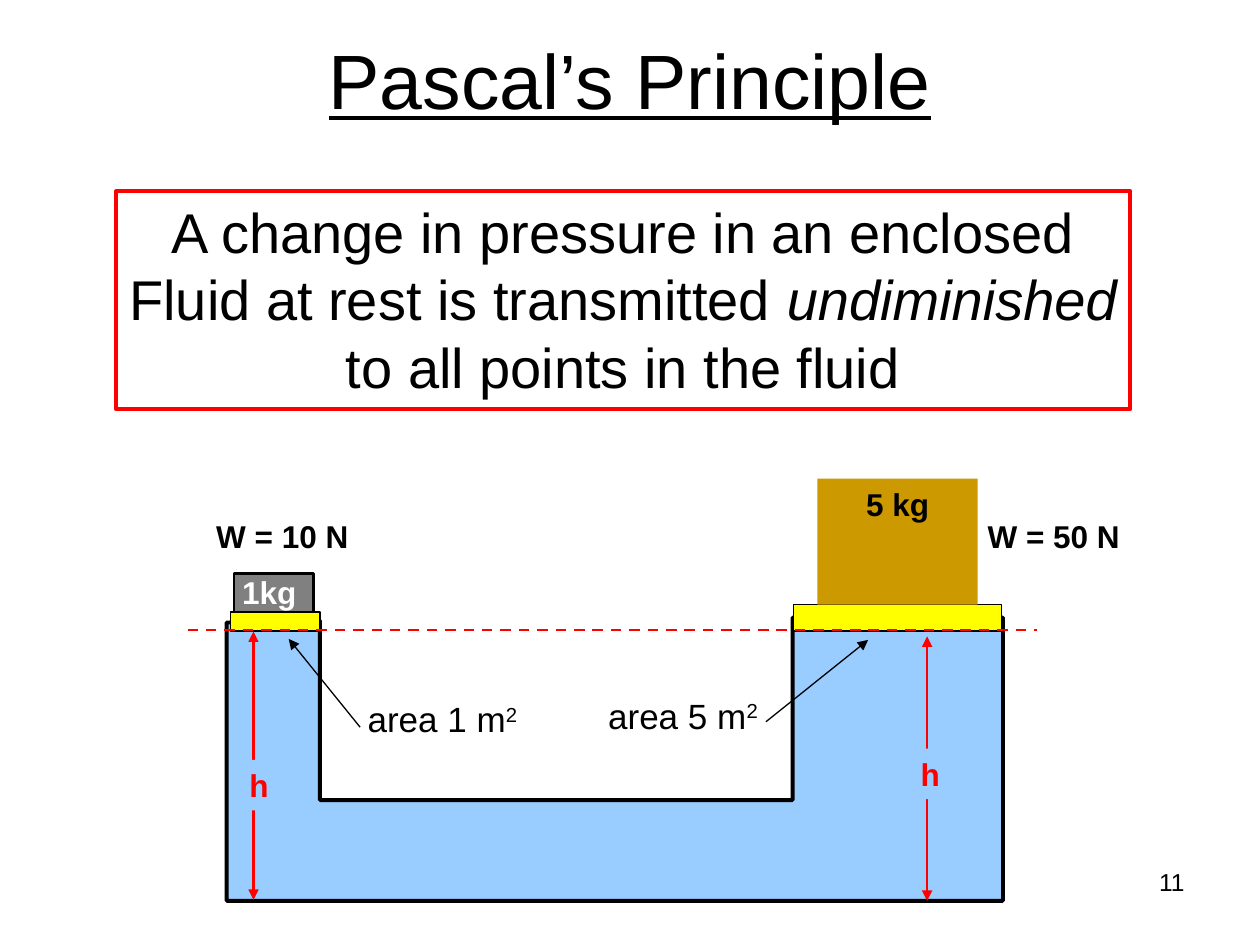
"""Build the Pascal's principle slide with its hydraulic press diagram."""
from lxml.etree import SubElement
from pptx import Presentation
from pptx.dml.color import RGBColor
from pptx.enum.dml import MSO_LINE_DASH_STYLE as DASH
from pptx.enum.shapes import MSO_CONNECTOR as CONN, MSO_SHAPE as SHAPE
from pptx.enum.text import MSO_ANCHOR as ANCHOR, PP_ALIGN as ALIGN
from pptx.oxml.ns import qn
from pptx.util import Cm, Pt

COLORS = {
    "black": "000000", "white": "FFFFFF", "red": "FF0000", "water": "99CCFF",
    "piston": "FFFF00", "small": "808080", "large": "CC9900",
}


def rgb(name):
    return RGBColor.from_string(COLORS[name])


def format_runs(tf, size, color="black", bold=False, align=ALIGN.LEFT):
    for p in tf.paragraphs:
        p.alignment = align
        for r in p.runs:
            r.font.name = "Arial"
            r.font.size = Pt(size)
            r.font.bold = bold
            r.font.color.rgb = rgb(color)


def paint(sp, fill=None, line=None, width=0.75):
    sp.shadow.inherit = False
    if fill:
        sp.fill.solid()
        sp.fill.fore_color.rgb = rgb(fill)
    else:
        sp.fill.background()
    if line:
        sp.line.color.rgb = rgb(line)
        sp.line.width = Pt(width)
    else:
        sp.line.fill.background()


def add_box(s, at, fill=None, line=None, width=0.75):
    sp = s.shapes.add_shape(SHAPE.RECTANGLE, *map(Cm, at))
    paint(sp, fill, line, width)
    sp.text_frame.vertical_anchor = ANCHOR.TOP
    return sp


def add_label(s, at, text, size, bold=False, align=ALIGN.LEFT, wrap=False):
    tf = s.shapes.add_textbox(*map(Cm, at)).text_frame
    tf.word_wrap = wrap
    tf.text = text
    format_runs(tf, size, bold=bold, align=align)
    return tf


def add_area(s, left, top, text):
    tf = add_label(s, (left, top, 3.56, 1.09), text, 20)
    r = tf.paragraphs[0].add_run()
    r.text = "2"
    format_runs(tf, 20)
    r.font._element.set("baseline", "30000")


def add_line(s, start, end, color, width, heads=(), dash=None):
    ln = s.shapes.add_connector(CONN.STRAIGHT, *map(Cm, (*start, *end)))
    ln.line.color.rgb = rgb(color)
    ln.line.width = Pt(width)
    if dash:
        ln.line.dash_style = dash
    for head in heads:
        SubElement(ln.line._get_or_add_ln(), qn(f"a:{head}"), type="triangle")
    SubElement(ln._element.spPr, qn("a:effectLst"))


def add_tank(s):
    points = [(4.57, 12.55), (4.57, 18.16), (20.22, 18.16), (20.22, 12.45),
              (15.98, 12.45), (15.98, 16.13), (6.45, 16.13), (6.45, 12.52)]
    corners = [(Cm(x), Cm(y)) for x, y in points]
    builder = s.shapes.build_freeform(*corners[0])
    builder.add_line_segments(corners[1:], close=True)
    paint(builder.convert_to_shape(), "water", "black", 2.25)


def add_title(s):
    title = s.shapes.title
    title.left, title.top, title.width, title.height = map(Cm, (0, 0, 25.4, 3.18))
    tf = title.text_frame
    tf.text = "Pascal’s Principle"
    tf.vertical_anchor = ANCHOR.MIDDLE
    format_runs(tf, 44, align=ALIGN.CENTER)
    tf.paragraphs[0].runs[0].font.underline = True


def add_statement(s):
    tf = add_box(s, (2.34, 3.86, 20.45, 4.39), line="red", width=2.25).text_frame
    tf.word_wrap = False
    tf.text = ("A change in pressure in an enclosed\n"
               "Fluid at rest is transmitted \n"
               "to all points in the fluid")
    r = tf.paragraphs[1].add_run()
    r.text = "undiminished"
    r.font.italic = True
    format_runs(tf, 32, align=ALIGN.CENTER)


def add_small_weight(s):
    tf = add_box(s, (4.72, 11.56, 1.6, 0.81), "small", "black", 1.5).text_frame
    tf.margin_left = tf.margin_top = tf.margin_bottom = 0
    tf.margin_right = Cm(0.18)
    tf.text = "1kg"
    format_runs(tf, 18, "white", True, ALIGN.CENTER)


def add_large_weight(s):
    tf = add_box(s, (16.48, 9.65, 3.23, 2.54), "large").text_frame
    tf.text = "5 kg"
    format_runs(tf, 18, bold=True, align=ALIGN.CENTER)


def add_height_label(s, left, top):
    tf = add_box(s, (left, top, 0.89, 1.02), "water").text_frame
    tf.word_wrap = False
    tf.text = "h"
    format_runs(tf, 18, "red", True)


def main():
    prs = Presentation()
    prs.slide_width, prs.slide_height = Cm(25.4), Cm(19.05)
    s = prs.slides.add_slide(prs.slide_layouts[5])
    add_statement(s)
    add_title(s)

    add_small_weight(s)
    add_tank(s)
    for at in ((4.65, 12.34, 1.8, 0.38), (16, 12.19, 4.19, 0.53)):
        add_box(s, at, "piston", "black")
    add_area(s, 7.16, 13.94, "area 1 m")
    add_area(s, 12.01, 13.87, "area 5 m")

    add_line(s, (3.78, 12.7), (20.9, 12.7), "red", 1.5, dash=DASH.DASH)
    for x, top, bottom in ((5.11, 12.73, 18.14), (18.69, 12.83, 18.16)):
        add_line(s, (x, top), (x, bottom), "red", 1.5, ("headEnd", "tailEnd"))
    add_height_label(s, 4.78, 15.32)
    add_height_label(s, 18.31, 15.09)

    for left, text in ((4.11, "W = 10 N"), (19.66, "W = 50 N")):
        add_label(s, (left, 10.29, 3.18, 1.02), text, 18, bold=True)
    add_line(s, (7.26, 14.66), (5.82, 12.88), "black", 0.75, ("tailEnd",))
    add_line(s, (15.44, 14.55), (17.5, 12.9), "black", 0.75, ("tailEnd",))
    add_large_weight(s)
    add_label(s, (18.21, 17.35, 5.92, 1.32), "11", 14, align=ALIGN.RIGHT, wrap=True)
    prs.save("out.pptx")


if __name__ == "__main__":
    main()
